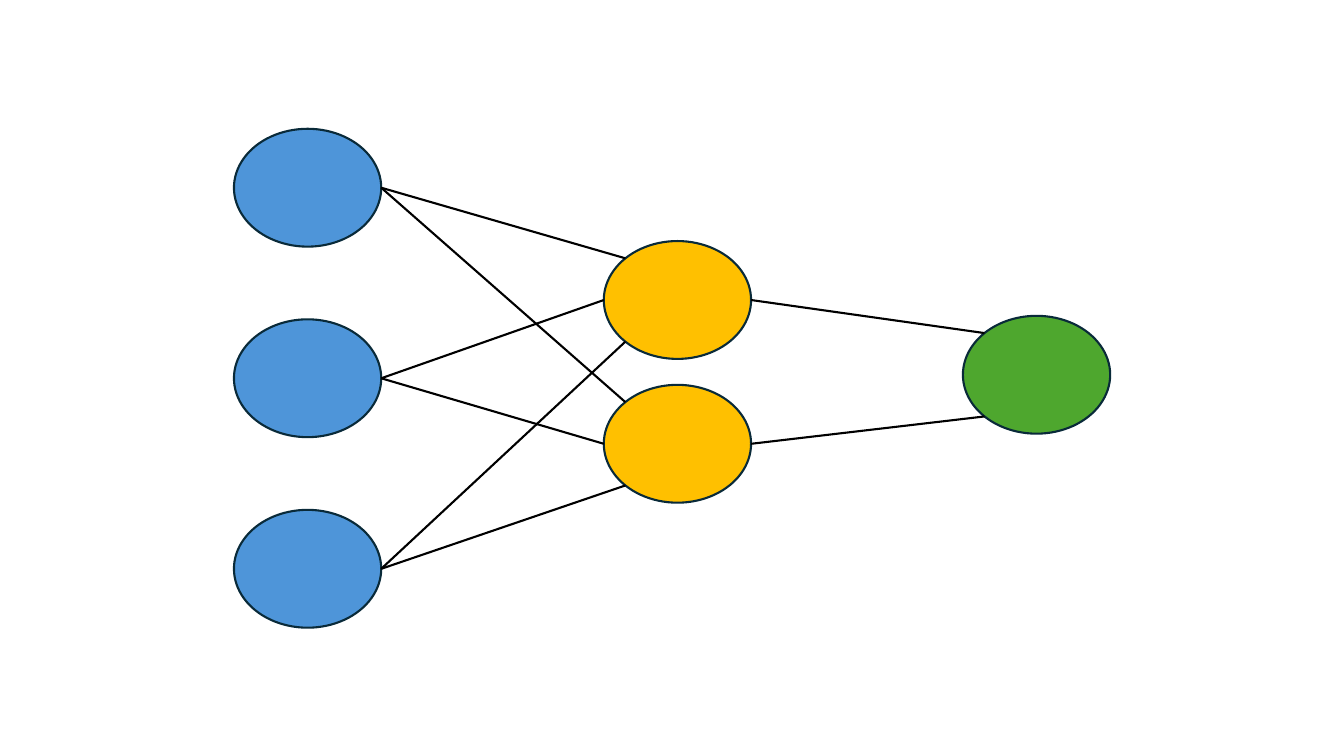
"""Build a slide with a small neural network: three inputs, two hidden nodes, one output."""
from math import sqrt

from lxml import etree
from pptx import Presentation
from pptx.dml.color import RGBColor
from pptx.enum.shapes import MSO_CONNECTOR, MSO_SHAPE
from pptx.oxml.ns import qn
from pptx.util import Pt

ELLIPSE = MSO_SHAPE.OVAL
STRAIGHT = MSO_CONNECTOR.STRAIGHT
NODE_W, NODE_H = 105.2, 84.2
LINE_WIDTH = 1.5


def color(hex_string):
    return RGBColor.from_string(hex_string)


prs = Presentation()
prs.slide_width, prs.slide_height = Pt(960), Pt(540)
slide = prs.slides.add_slide(prs.slide_layouts[6])
network = slide.shapes.add_group_shape()

inputs = [(167.1, 92 + 136.1 * row) for row in range(3)]
hidden = [(431.3, 172.2 + 102.7 * row) for row in range(2)]
output = (687.8, 225.6)

layers = [(inputs, "4E95D9"), (hidden, "FFC000"), ([output], "4EA72E")]
for nodes, fill in layers:
    for left, top in nodes:
        node = network.shapes.add_shape(
            ELLIPSE, Pt(left), Pt(top), Pt(NODE_W), Pt(NODE_H))
        node.shadow.inherit = False
        node.fill.solid()
        node.fill.fore_color.rgb = color(fill)
        node.line.color.rgb = color("092A39")
        node.line.width = Pt(LINE_WIDTH)

diagonal_x = NODE_W / 2 * (1 - 1 / sqrt(2))
diagonal_y = NODE_H / 2 * (1 - 1 / sqrt(2))
entries = {
    "upper": (diagonal_x, diagonal_y),
    "middle": (0, NODE_H / 2),
    "lower": (diagonal_x, NODE_H - diagonal_y),
}

links = [
    (inputs[0], hidden[0], "upper"),
    (inputs[0], hidden[1], "upper"),
    (inputs[1], hidden[0], "middle"),
    (inputs[1], hidden[1], "middle"),
    (inputs[2], hidden[0], "lower"),
    (inputs[2], hidden[1], "lower"),
    (hidden[0], output, "upper"),
    (hidden[1], output, "lower"),
]
for (from_left, from_top), (to_left, to_top), entry in links:
    entry_x, entry_y = entries[entry]
    link = network.shapes.add_connector(
        STRAIGHT,
        Pt(from_left + NODE_W), Pt(from_top + NODE_H / 2),
        Pt(to_left + entry_x), Pt(to_top + entry_y))
    link.line.color.rgb = color("000000")
    link.line.width = Pt(LINE_WIDTH)
    etree.SubElement(link._element.spPr, qn("a:effectLst"))

prs.save("out.pptx")
